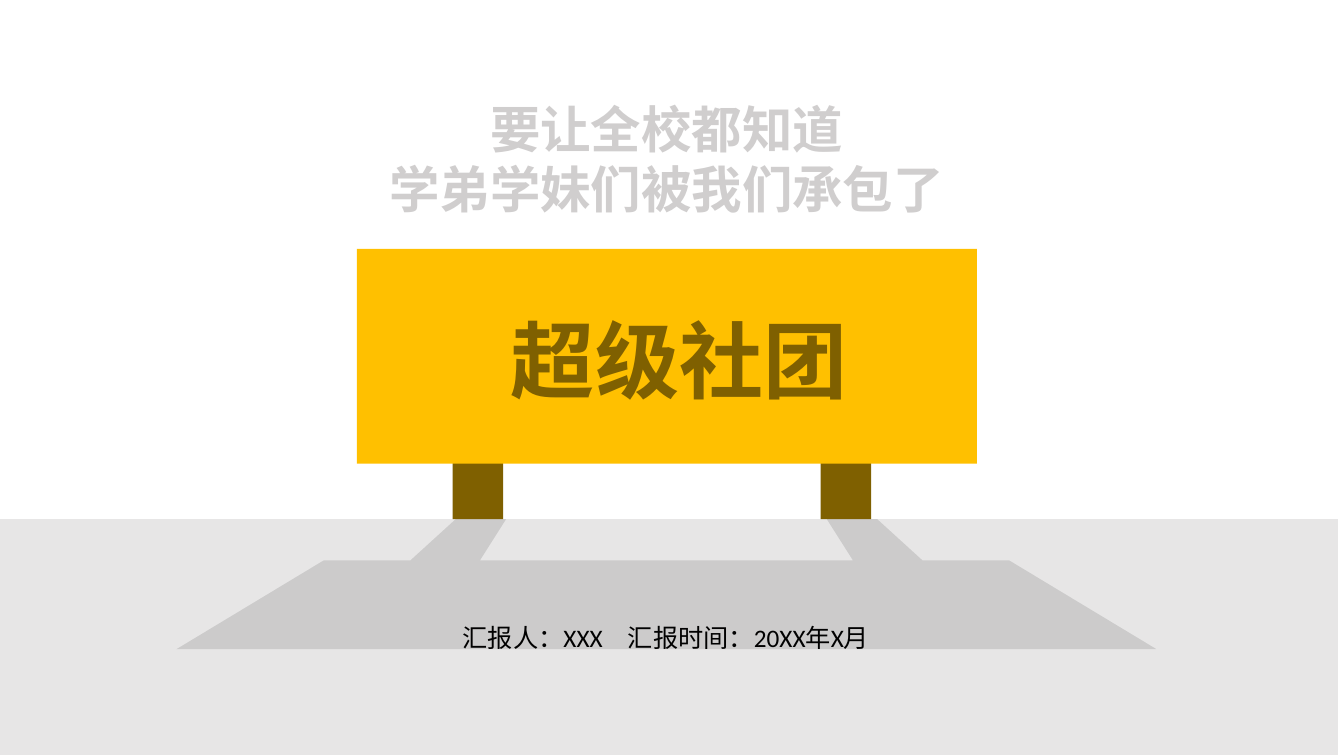
from pptx import Presentation
from pptx.dml.color import RGBColor
from pptx.enum.shapes import MSO_SHAPE
from pptx.enum.text import MSO_ANCHOR, PP_ALIGN
from pptx.oxml.ns import qn
from pptx.util import Inches, Pt
from lxml import etree

RECT = MSO_SHAPE.RECTANGLE
MIDDLE = MSO_ANCHOR.MIDDLE
CENTER = PP_ALIGN.CENTER

COLORS = {
    "ground": "E7E6E6",
    "shade": "0C0C0C",
    "wood": "7F6000",
    "board": "FFC000",
    "slogan": "D0CECE",
    "ink": "000000",
}


def paint(shape, color):
    shape.shadow.inherit = False
    shape.fill.solid()
    shape.fill.fore_color.rgb = RGBColor.from_string(COLORS[color])
    shape.line.fill.background()


def add_rect(slide, box, color):
    shape = slide.shapes.add_shape(RECT, *map(Inches, box))
    paint(shape, color)
    return shape


def write(frame, lines, size, color, font="Calibri", bold=False):
    for i, line in enumerate(lines):
        para = frame.paragraphs[0] if i == 0 else frame.add_paragraph()
        para.text = line
        para.alignment = CENTER
        para.font.size = Pt(size)
        para.font.name = font
        para.font.bold = bold
        para.font.color.rgb = RGBColor.from_string(COLORS[color])


def add_text(slide, box, wrap, *style):
    frame = slide.shapes.add_textbox(*map(Inches, box)).text_frame
    frame.word_wrap = wrap
    write(frame, *style)


def add_ground(slide, box):
    ground = add_rect(slide, box, "ground")
    ground.text_frame.vertical_anchor = MIDDLE
    write(ground.text_frame, ["汇报人：XXX　汇报时间：20XX年X月"], 18, "ink")


def add_shade(slide, box):
    left, top, width, height = box
    # Left half, from the post foot round to the front corner
    half = [(3.27, 0), (3.01, 0.41), (2.32, 0.41), (2.77, 0)]
    half = [(2.77, 0), (3.27, 0), (3.01, 0.41)]
    edge = [(0, height), (1.46, 0.41), (2.32, 0.41)]
    mirror = [(width - x, y) for x, y in reversed(edge + half)]
    points = [(Inches(left + x), Inches(top + y))
              for x, y in half + mirror + edge]
    pen = slide.shapes.build_freeform(*points[0])
    pen.add_line_segments(points[1:], close=True)
    shade = pen.convert_to_shape()
    paint(shade, "shade")
    # Transparency
    tint = shade.fill._xPr.find(qn("a:solidFill"))[0]
    etree.SubElement(tint, qn("a:alpha")).set("val", "12000")


def add_sign(slide, box):
    left, top, width, height = box
    # Posts behind the board
    for x in (0.95, 4.6):
        add_rect(slide, (left + x, top + 1.5, 0.5, 1.18), "wood")
    add_rect(slide, box, "board")
    # Name on the board
    add_text(slide, (left + 1.41, top + 0.54, 3.57, 1.11), False,
             ["超级社团"], 60, "wood", "Lato", True)


def add_slogan(slide, box):
    add_text(slide, box, True, ["要让全校都知道", "学弟学妹们被我们承包了"],
             36, "slogan", "Calibri", True)


def main():
    deck = Presentation()
    deck.slide_width = Inches(13.33)
    deck.slide_height = Inches(7.5)
    slide = deck.slides.add_slide(deck.slide_layouts[6])
    add_ground(slide, (-0.06, 5.15, 13.33, 2.34))
    add_shade(slide, (1.75, 5.15, 9.72, 1.29))
    add_sign(slide, (3.54, 2.47, 6.15, 2.13))
    add_slogan(slide, (3.45, 0.92, 6.32, 1.31))
    deck.save("out.pptx")


if __name__ == "__main__":
    main()
